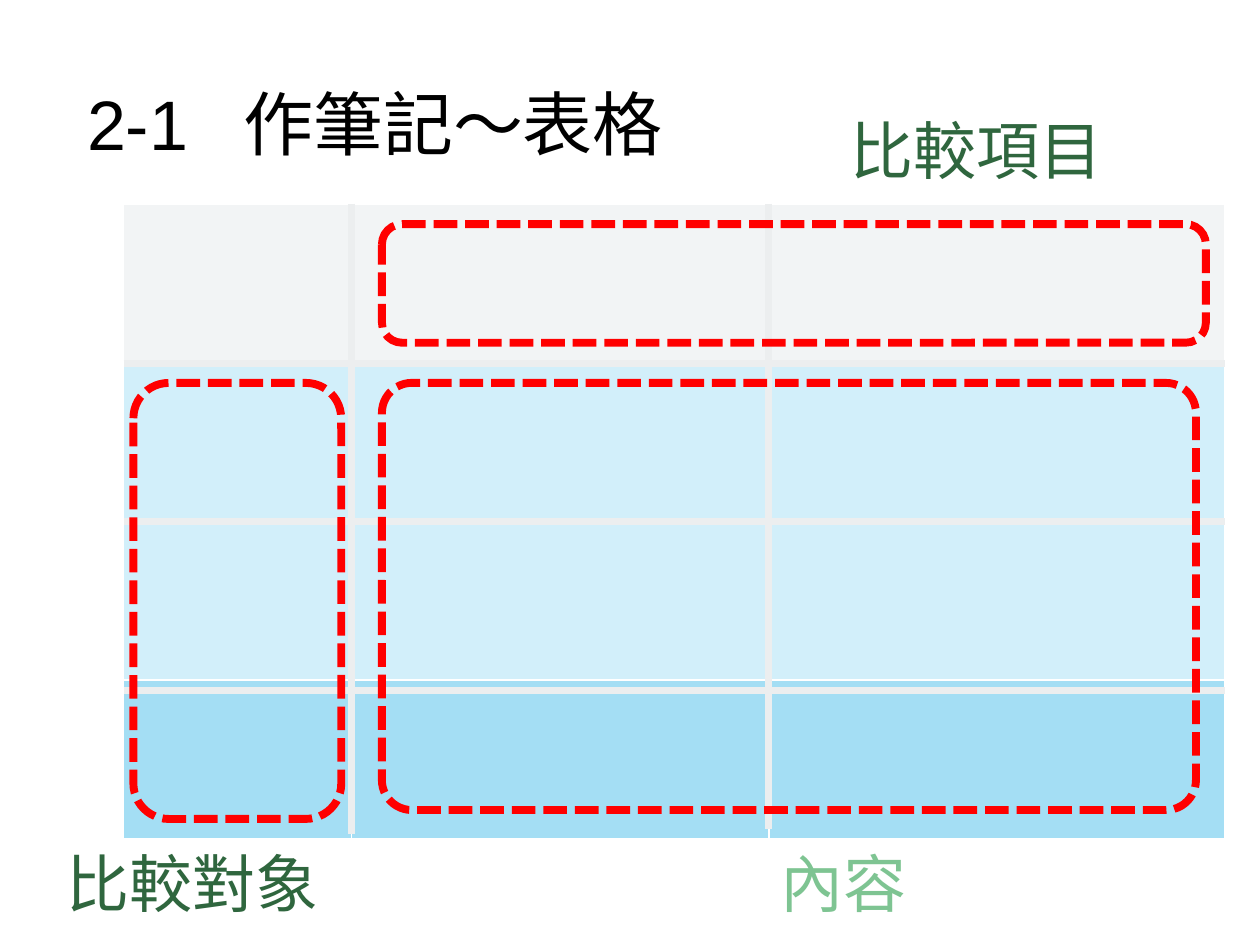
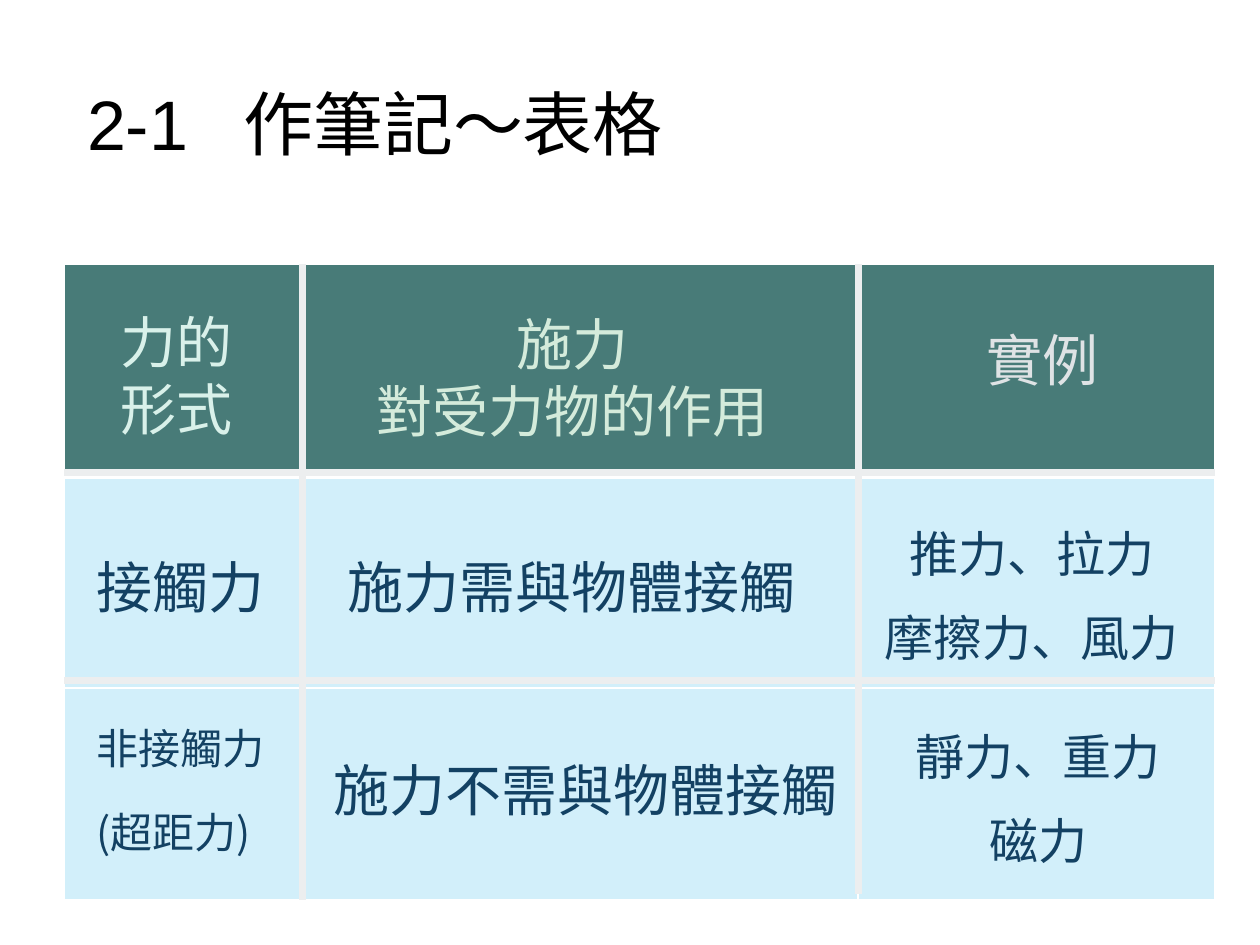
import itertools

import pptx
import pptx.dml.color
import pptx.enum.dml
import pptx.enum.shapes
import pptx.enum.text
import pptx.oxml
import pptx.oxml.ns
import pptx.util
from pptx.util import Cm

RGBColor = pptx.dml.color.RGBColor
BLACK = RGBColor(0x00, 0x00, 0x00)
RULE = RGBColor(0xEC, 0xEE, 0xEF)
PALE_GREY = RGBColor(0xF2, 0xF4, 0xF5)
TEAL = RGBColor(0x48, 0x7B, 0x78)
PALE_BLUE = RGBColor(0xD2, 0xEF, 0xFA)
SKY = RGBColor(0xA4, 0xDE, 0xF4)
NAVY = RGBColor(0x13, 0x41, 0x63)
DARK_GREEN = RGBColor(0x2F, 0x66, 0x3E)
LIGHT_GREEN = RGBColor(0x7E, 0xC4, 0x92)
MINT = RGBColor(0xD9, 0xF1, 0xEA)
PALE_GREEN = RGBColor(0xD4, 0xEB, 0xDB)
SILVER = RGBColor(0xDF, 0xE3, 0xE5)
RED = RGBColor(0xFF, 0x00, 0x00)

CJK = "Noto Sans CJK SC"
NS = pptx.oxml.ns.nsdecls("a")
LEFT = pptx.enum.text.PP_ALIGN.LEFT
CENTER = pptx.enum.text.PP_ALIGN.CENTER


def write(sp, text, size, color, font=CJK, align=LEFT, spacing=None):
    tf = sp.text_frame
    tf.text = text
    tf.word_wrap = True
    tf.auto_size = pptx.enum.text.MSO_AUTO_SIZE.SHAPE_TO_FIT_TEXT
    tf.vertical_anchor = pptx.enum.text.MSO_ANCHOR.TOP
    for p in tf.paragraphs:
        p.alignment = align
        if spacing:
            p.line_spacing = pptx.util.Pt(spacing)
        for r in p.runs:
            r.font.size = pptx.util.Pt(size)
            r.font.color.rgb = color
            r.font.name = font
            r.font._element.append(pptx.oxml.parse_xml(f'<a:ea {NS} typeface="{CJK}"/>'))


def add_grid(s, left, top, cols, row_height, fills, rules, ends):
    """Add an empty table, one fill per row, with thick rules over its inner edges."""
    right = left + sum(cols)
    table = s.shapes.add_table(len(fills), len(cols), Cm(left), Cm(top),
                               Cm(right - left), Cm(row_height * len(fills))).table
    for column, width in zip(table.columns, cols):
        column.width = Cm(width)
    for i, fill in enumerate(fills):
        for cell in table.rows[i].cells:
            cell.fill.solid()
            cell.fill.fore_color.rgb = fill
            tcPr = cell._tc.get_or_add_tcPr()
            for k, side in enumerate("LRTB"):
                width = 38100 if (i == 0 and side == "B") or (i == 1 and side == "T") else 12700
                tcPr.insert(k, pptx.oxml.parse_xml(
                    f'<a:ln{side} {NS} w="{width}"><a:solidFill>'
                    f'<a:srgbClr val="FFFFFF"/></a:solidFill></a:ln{side}>'))
    inner_edges = list(itertools.accumulate(cols, initial=left))[1:-1]
    lines = [(left, y, right, y) for y in rules]
    lines += [(x, top, x, end) for x, end in zip(inner_edges, ends)]
    for line in lines:
        cx = s.shapes.add_connector(pptx.enum.shapes.MSO_CONNECTOR.STRAIGHT,
                                    *[Cm(v) for v in line])
        cx.line.color.rgb = RULE
        cx.line.width = pptx.util.Pt(4)
        cx._element.spPr.append(pptx.oxml.parse_xml(f"<a:effectLst {NS}/>"))


prs = pptx.Presentation()
prs.slide_width = Cm(25.4)
prs.slide_height = Cm(19.05)

# Both slides carry the same title
for _ in range(2):
    s = prs.slides.add_slide(prs.slide_layouts[5])
    title = s.shapes.title
    title.left, title.top, title.width, title.height = Cm(1.5), Cm(1.5), Cm(20.8), Cm(1.96)
    write(title, "2-1\t作筆記～表格", 40, BLACK, font="Arial")
    pPr = title.text_frame.paragraphs[0]._p.get_or_add_pPr()
    pPr.append(pptx.oxml.parse_xml(
        f'<a:tabLst {NS}><a:tab pos="{Cm(3.15)}" algn="l"/></a:tabLst>'))

blank_slide, forces_slide = prs.slides

# Slide 1: the parts of a comparison table
add_grid(blank_slide, 2.49, 4.11, [4.6, 8.41, 9.19], 3.2,
         [PALE_GREY, PALE_BLUE, PALE_BLUE, SKY], [7.32, 10.52, 13.92], [16.81, 16.71])

labels = [
    ("比較對象", 1.09, 16.89, 6.6, DARK_GREEN),
    ("比較項目", 16.89, 2.13, 6.6, DARK_GREEN),
    ("內容", 15.49, 16.89, 4, LIGHT_GREEN),
]
for text, x, y, w, color in labels:
    sp = blank_slide.shapes.add_textbox(Cm(x), Cm(y), Cm(w), Cm(1.8))
    write(sp, text, 36, color)

dashed_frames = [
    (2.69, 7.72, 4.19, 8.79, 0.17),
    (7.7, 4.52, 16.61, 2.39, 0.17),
    (7.7, 7.72, 16.41, 8.61, 0.07),
]
for x, y, w, h, corner in dashed_frames:
    sp = blank_slide.shapes.add_shape(pptx.enum.shapes.MSO_SHAPE.ROUNDED_RECTANGLE,
                                      Cm(x), Cm(y), Cm(w), Cm(h))
    sp.adjustments[0] = corner
    sp.shadow.inherit = False
    sp.fill.background()
    sp.line.color.rgb = RED
    sp.line.width = pptx.util.Pt(4.5)
    sp.line.dash_style = pptx.enum.dml.MSO_LINE.SQUARE_DOT

# Slide 2: contact and non-contact forces
add_grid(forces_slide, 1.3, 5.33, [4.8, 11.2, 7.19], 4.27,
         [TEAL, PALE_BLUE, PALE_BLUE], [9.53, 13.72], [18.14, 18.03])

entries = [
    ("力的\n形式", 1.37, 6.07, 4.39, 3, 32, MINT, CENTER, None),
    ("施力\n對受力物的作用", 6.12, 6.12, 10.85, 3, 32, PALE_GREEN, CENTER, None),
    ("實例", 18.01, 6.43, 6.02, 1.63, 32, SILVER, CENTER, None),
    ("接觸力", 1.7, 10.67, 4.39, 1.8, 32, NAVY, LEFT, 48),
    ("施力需與物體接觸", 6.55, 10.67, 9.96, 1.8, 32, NAVY, CENTER, 48),
    ("推力、拉力\n摩擦力、風力", 17.5, 9.93, 6.6, 3.68, 28, NAVY, CENTER, 48),
    ("非接觸力\n(超距力)", 1.7, 13.77, 4.39, 3.68, 24, NAVY, LEFT, 48),
    ("施力不需與物體接觸", 6.12, 14.76, 11.38, 1.8, 32, NAVY, CENTER, 48),
    ("靜力、重力\n磁力", 17.63, 14.02, 6.6, 3.68, 28, NAVY, CENTER, 48),
]
for text, x, y, w, h, size, color, align, spacing in entries:
    sp = forces_slide.shapes.add_textbox(Cm(x), Cm(y), Cm(w), Cm(h))
    write(sp, text, size, color, align=align, spacing=spacing)

prs.save("out.pptx")
